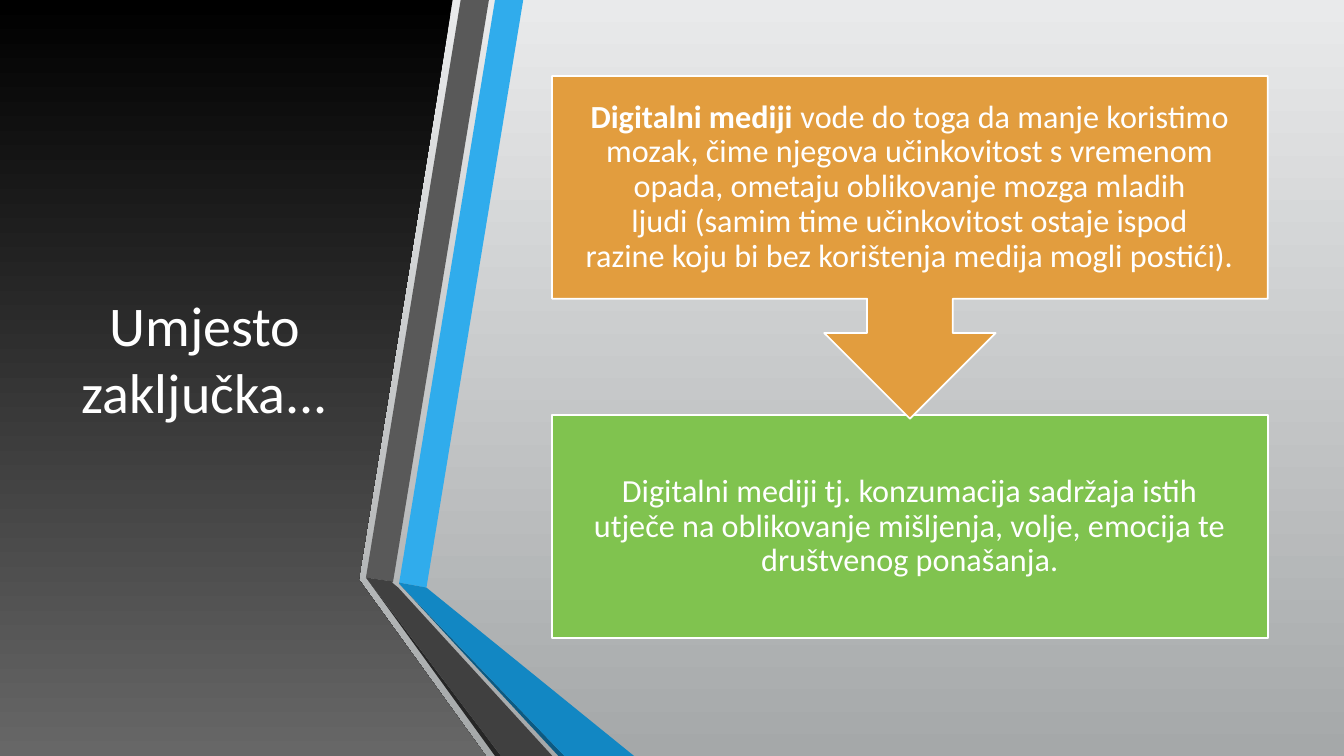
from pptx import Presentation
from pptx.dml.color import RGBColor
from pptx.enum.shapes import MSO_SHAPE as SHAPE
from pptx.enum.text import MSO_ANCHOR as ANCHOR, MSO_AUTO_SIZE as FIT, PP_ALIGN as ALIGN
from pptx.util import Inches, Pt

WHITE = RGBColor(0xFF, 0xFF, 0xFF)
BLACK = RGBColor(0x00, 0x00, 0x00)
PALE = RGBColor(0xE9, 0xEA, 0xEB)
SILVER = RGBColor(0xA5, 0xA8, 0xA9)
GREY = RGBColor(0x67, 0x67, 0x67)
BAND_GREY = RGBColor(0x59, 0x59, 0x59)
DARK_GREY = RGBColor(0x40, 0x40, 0x40)
DEEP_GREY = RGBColor(0x26, 0x26, 0x26)
BLUE = RGBColor(0x30, 0xAC, 0xEC)
DARK_BLUE = RGBColor(0x12, 0x87, 0xC3)
DEEP_BLUE = RGBColor(0x0C, 0x5A, 0x82)
ORANGE = RGBColor(0xE2, 0x9D, 0x3E)
GREEN = RGBColor(0x80, 0xC3, 0x4F)

PANEL = [(0, 0), (33.68, 0), (26.7, 76.67), (36.15, 100), (0, 100)]
BANDS = [
    (BLUE, [(29.7, 77.07), (31.73, 77.73), (38.93, 0), (36.83, 0)]),
    (BAND_GREY, [(36.38, 0), (34.28, 0), (27.23, 76.4), (29.25, 76.93)]),
    (DEEP_GREY, [(27.23, 76.4), (36.83, 100), (37.28, 100)]),
    (DEEP_BLUE, [(29.7, 77.2), (41.55, 100), (42, 100)]),
    (DARK_BLUE, [(29.7, 77.07), (29.7, 77.2), (42, 100), (47.18, 100), (31.73, 77.73)]),
    (DARK_GREY, [(41.1, 100), (29.63, 77.73), (29.18, 77.07), (29.25, 76.93),
                 (27.23, 76.4), (37.28, 100)]),
]
BOX_LEFT, BOX_WIDTH = 41.08, 53.25
TIE, HARD_SPACE = "~", chr(160)
EFFECT = [("Digitalni mediji tj. konzumacija sadržaja istih utječe~na~oblikovanje mišljenja, "
           "volje, emocija te društvenog ponašanja.", False)]
CAUSE = [("Digitalni mediji", True),
         (" vode do toga da manje koristimo mozak, čime njegova učinkovitost s vremenom opada, "
          "ometaju~oblikovanje mozga mladih ljudi~(samim~time učinkovitost ostaje ispod "
          "razine~koju bi bez korištenja medija mogli postići).", False)]


class Deck:
    font = "Calibri"
    title_size = Pt(40)
    body_size = Pt(23)
    inset = Inches(0.18)

    def __init__(self, prs):
        self.width, self.height = prs.slide_width, prs.slide_height
        self.s = prs.slides.add_slide(prs.slide_layouts[5])

    def at(self, x, y):
        return round(self.width * x / 100), round(self.height * y / 100)

    def gradient(self, fill, top, bottom):
        fill.gradient()
        fill.gradient_angle = 270
        for stop, color, position in zip(fill.gradient_stops, (top, bottom), (0, 1)):
            stop.color.rgb = color
            stop.position = position

    def background(self, top, bottom):
        self.gradient(self.s.background.fill, top, bottom)

    def outline(self, points):
        start, *rest = [self.at(*point) for point in points]
        builder = self.s.shapes.build_freeform(*start)
        builder.add_line_segments(rest)
        sp = builder.convert_to_shape()
        sp.shadow.inherit = False
        sp.line.fill.background()
        return sp

    def panel(self, points, top, bottom):
        self.gradient(self.outline(points).fill, top, bottom)

    def band(self, color, points):
        sp = self.outline(points)
        sp.fill.solid()
        sp.fill.fore_color.rgb = color

    def style(self, r, size, bold=False):
        r.font.name = self.font
        r.font.size = size
        r.font.bold = bold
        r.font.color.rgb = WHITE

    def title(self, text, x, y, w, h):
        sp = self.s.shapes.title
        sp.left, sp.top = self.at(x, y)
        sp.width, sp.height = self.at(w, h)
        tf = sp.text_frame
        tf.text = text
        tf.word_wrap = True
        tf.auto_size = FIT.NONE
        tf.vertical_anchor = ANCHOR.MIDDLE
        p = tf.paragraphs[0]
        p.alignment = ALIGN.CENTER
        self.style(p.runs[0], self.title_size)
        self.s.shapes.element.append(sp.element)

    def box(self, kind, color, runs, x, y, w, h):
        sp = self.s.shapes.add_shape(kind, *self.at(x, y), *self.at(w, h))
        sp.shadow.inherit = False
        sp.fill.solid()
        sp.fill.fore_color.rgb = color
        sp.line.color.rgb = WHITE
        sp.line.width = Pt(1.25)
        tf = sp.text_frame
        tf.word_wrap = True
        tf.vertical_anchor = ANCHOR.MIDDLE
        tf.margin_left = tf.margin_right = tf.margin_top = tf.margin_bottom = self.inset
        p = tf.paragraphs[0]
        p.alignment = ALIGN.CENTER
        p.line_spacing = 0.9
        for text, bold in runs:
            r = p.add_run()
            r.text = text.replace(TIE, HARD_SPACE)
            self.style(r, self.body_size, bold)


def main():
    prs = Presentation()
    prs.slide_width, prs.slide_height = Inches(13.33), Inches(7.5)
    deck = Deck(prs)
    deck.background(PALE, SILVER)
    deck.panel(PANEL, BLACK, GREY)
    deck.title("Umjesto zaključka...", 4.4, 10.05, 21.68, 74.4)
    for color, points in BANDS:
        deck.band(color, points)
    deck.box(SHAPE.RECTANGLE, GREEN, EFFECT, BOX_LEFT, 54.93, BOX_WIDTH, 29.47)
    deck.box(SHAPE.DOWN_ARROW_CALLOUT, ORANGE, CAUSE, BOX_LEFT, 10.05, BOX_WIDTH, 45.33)
    prs.save("out.pptx")


if __name__ == "__main__":
    main()
